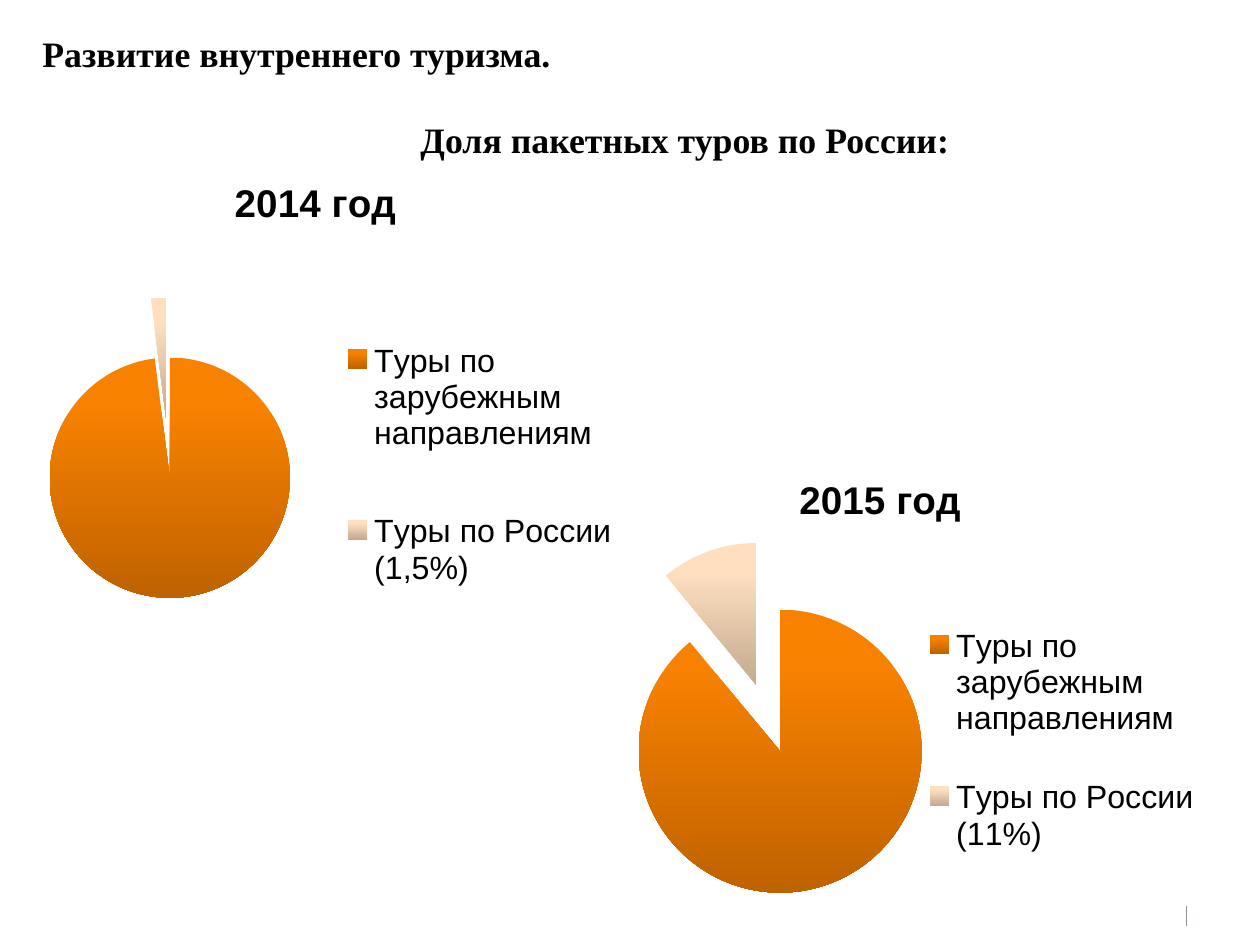
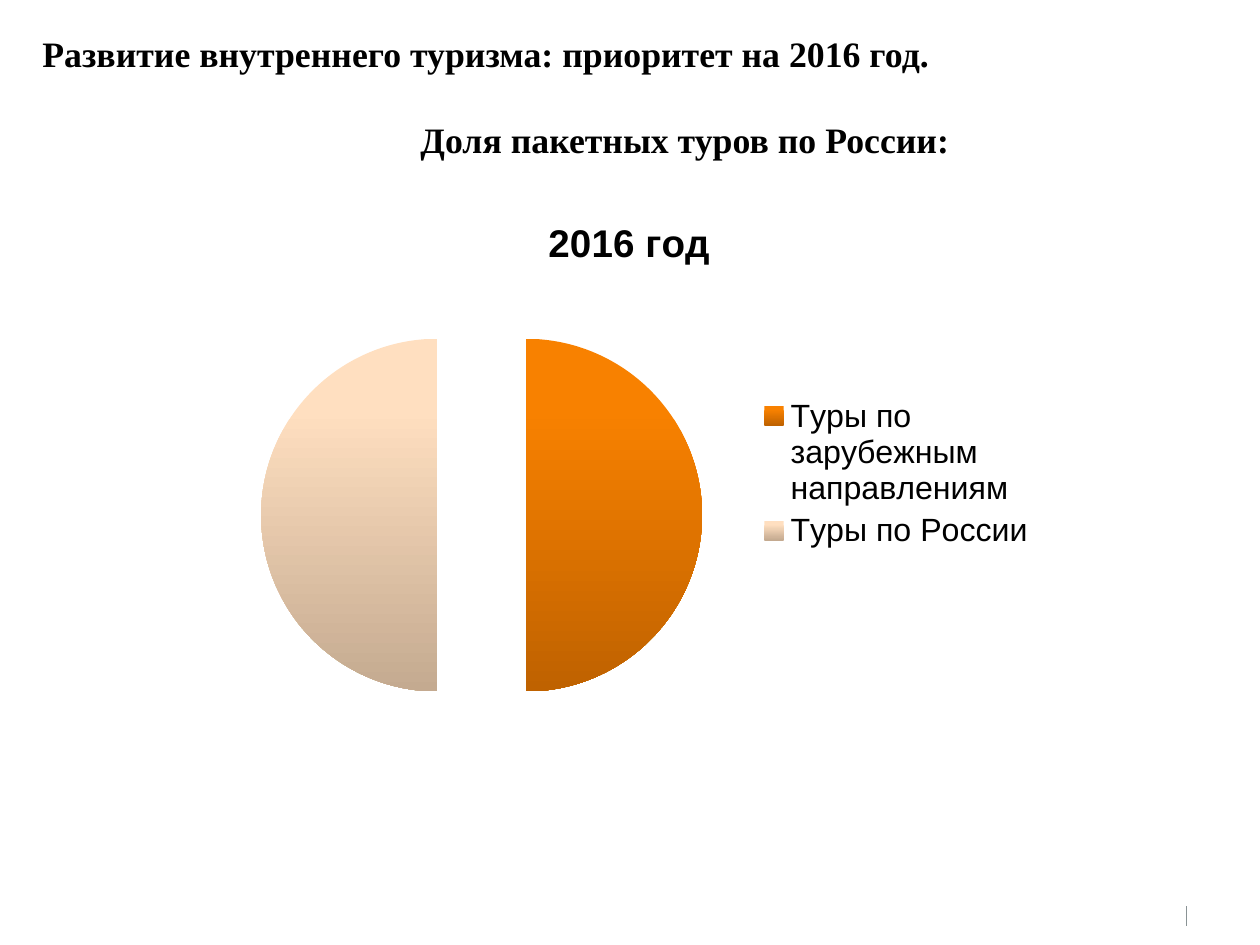
from pptx import Presentation
from pptx.chart.data import CategoryChartData
from pptx.dml.color import RGBColor
from pptx.enum.chart import XL_CHART_TYPE as ChartType, XL_LEGEND_POSITION as LegendPosition
from pptx.enum.shapes import MSO_CONNECTOR as Connector
from pptx.oxml import parse_xml
from pptx.oxml.ns import nsdecls
from pptx.util import Inches, Pt

BLACK = "000000"
RULE_GREY = "8A9395"
SLICE_GRADIENTS = [("F88100", "BF6200"), ("FFDFC0", "C4AA90")]
SUBTITLE = "Доля пакетных туров по России:"
ABROAD = "Туры по зарубежным направлениям"
EXPLOSION = 25


def color(value):
    return RGBColor.from_string(value)


def add_layout(element, x, y, width, height, target=""):
    parts = "".join(
        f'<c:{name} val="{value}"/>'
        for name, value in [("xMode", "edge"), ("yMode", "edge"),
                            ("x", x), ("y", y), ("w", width), ("h", height)])
    layout = parse_xml(f'<c:layout {nsdecls("c")}><c:manualLayout>'
                       f'{target}{parts}</c:manualLayout></c:layout>')
    for old in element.findall(layout.tag):
        element.remove(old)
    return layout


slides = [
    ("Развитие внутреннего туризма.", [
        (" 2015 год", "Туры по России (11%)", (89, 11), (4.21, 3.52, 5.19, 3.44),
         (0.07, 0.2, 0.54, 0.8), (0.56, 0.3, 0.44, 0.7)),
        ("2014 год", "Туры по России (1,5%)", (98, 2), (0, 1.2, 4.91, 3.92),
         None, (0.53, 0.25, 0.46, 0.73)),
    ]),
    ("Развитие внутреннего туризма: приоритет на 2016 год.", [
        ("2016 год", "Туры по России", (50, 50), (1.63, 1.5, 6.53, 4.36), None, None),
    ]),
]

presentation = Presentation()
presentation.slide_width = Inches(9.8)
presentation.slide_height = Inches(7.35)

for title, charts in slides:
    slide = presentation.slides.add_slide(presentation.slide_layouts[6])

    rule = slide.shapes.add_connector(
        Connector.STRAIGHT, Inches(9.23), Inches(7.05), Inches(9.23), Inches(7.2))
    rule.line.color.rgb = color(RULE_GREY)
    rule.line.width = Pt(0.75)
    rule._element.spPr.append(parse_xml(f'<a:effectLst {nsdecls("a")}/>'))

    title_box = slide.shapes.add_textbox(Inches(0.33), Inches(0.25), Inches(7.29), Inches(1.35))
    text_frame = title_box.text_frame
    text_frame.word_wrap = True
    text_frame.margin_left = text_frame.margin_right = 0
    text_frame.margin_top = text_frame.margin_bottom = 0
    text_frame.text = f"{title}\n{SUBTITLE}"
    subtitle = text_frame.paragraphs[1]
    subtitle.space_before = Pt(24.2)
    subtitle._p.get_or_add_pPr().set("marL", str(Inches(2.94)))
    for paragraph in text_frame.paragraphs:
        font = paragraph.runs[0].font
        font.name = "Times New Roman"
        font.size = Pt(20)
        font.bold = True
        font.color.rgb = color(BLACK)

    for year, domestic, values, frame, plot_area, legend_area in charts:
        chart_data = CategoryChartData()
        chart_data.categories = [ABROAD, domestic]
        chart_data.add_series(year, values)
        chart = slide.shapes.add_chart(
            ChartType.PIE, *[Inches(length) for length in frame], chart_data).chart
        chart.font.name = "Arial"
        chart.font.size = Pt(18)
        chart.font.color.rgb = color(BLACK)

        chart.has_title = True
        chart.chart_title.include_in_layout = False
        chart.chart_title.text_frame.text = year
        title_font = chart.chart_title.text_frame.paragraphs[0].runs[0].font
        title_font.name = "Arial"
        title_font.size = Pt(21.6)
        title_font.bold = True
        title_font.color.rgb = color(BLACK)

        chart.has_legend = True
        legend = chart.legend
        legend.position = LegendPosition.RIGHT
        legend.include_in_layout = False
        if legend_area:
            legend_layout = add_layout(legend._element, *legend_area)
            legend._element.legendPos.addnext(legend_layout)
        if plot_area:
            plot_element = chart._chartSpace.chart.plotArea
            plot_layout = add_layout(plot_element, *plot_area, '<c:layoutTarget val="inner"/>')
            plot_element.insert(0, plot_layout)

        plot = chart.plots[0]
        plot.vary_by_categories = True
        series = plot.series[0]
        for index, shades in enumerate(SLICE_GRADIENTS):
            slice_format = series.points[index].format
            slice_format.line.fill.background()
            fill = slice_format.fill
            fill.gradient()
            fill.gradient_angle = 270
            for stop, shade, position in zip(fill.gradient_stops, shades, (0.2, 1)):
                stop.color.rgb = color(shade)
                stop.position = position
        first_point = series._element.find("{*}dPt")
        first_point.addprevious(parse_xml(f'<c:explosion {nsdecls("c")} val="{EXPLOSION}"/>'))

presentation.save("out.pptx")
